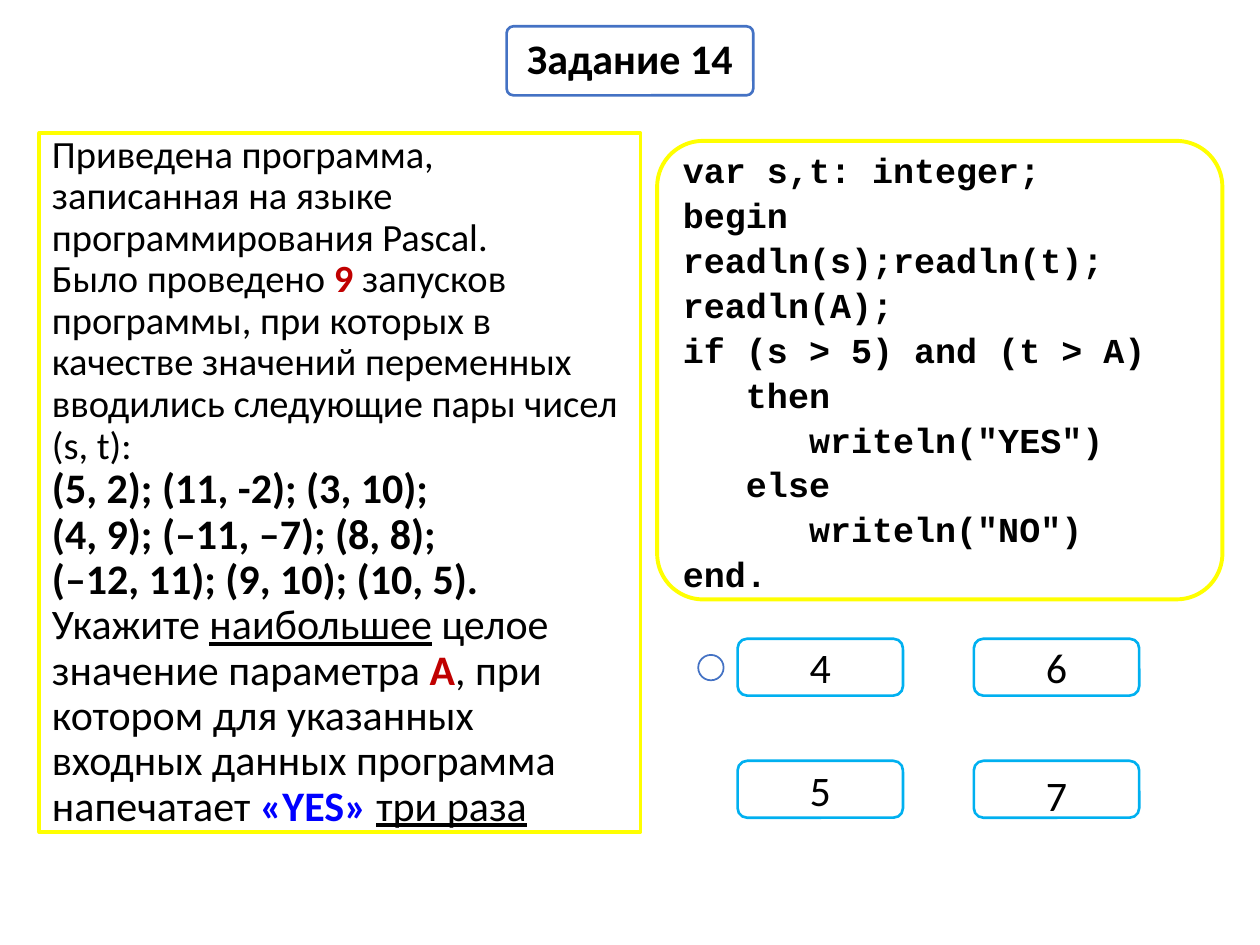
from copy import deepcopy

from pptx import Presentation
from pptx.dml.color import RGBColor
from pptx.enum.shapes import MSO_SHAPE as SHAPE
from pptx.enum.text import MSO_ANCHOR, MSO_AUTO_SIZE, PP_ALIGN
from pptx.util import Pt

BLACK = RGBColor(0, 0, 0)
WHITE = RGBColor(255, 255, 255)
RED = RGBColor(0xC0, 0, 0)
BLUE = RGBColor(0, 0, 255)
YELLOW = RGBColor(255, 255, 0)
CYAN = RGBColor(0, 0xB0, 0xF0)
ACCENT = RGBColor(0x44, 0x72, 0xC4)

# Content
HEADING = "Задание 14"
TASK = [
    ("Приведена программа, записанная на языке программирования Pascal. \n"
     "Было проведено ", dict(size=22)),
    ("9", dict(size=22, color=RED, bold=True)),
    (" запусков программы, при которых в качестве значений переменных "
     "вводились следующие пары чисел (s, t):\n", dict(size=22)),
    ("(5, 2); (11, -2); (3, 10);\n(4, 9); (–11, –7); (8, 8); \n"
     "(–12, 11); (9, 10); (10, 5).\n", dict(bold=True)),
    ("Укажите ", {}),
    ("наибольшее", dict(underline=True)),
    (" целое значение параметра ", {}),
    ("А", dict(color=RED, bold=True)),
    (", при котором для указанных входных данных программа напечатает ", {}),
    ("«YES» ", dict(color=BLUE, bold=True)),
    ("три раза", dict(underline=True)),
]
CODE = """var s,t: integer;
begin
readln(s);readln(t);
readln(A);
if (s > 5) and (t > А)
   then
      writeln("YES")
   else
      writeln("NO")
end.""".split("\n")
ANSWERS = [["4", "6"], ["5", "7"]]


def add_text(p, text, size=24, font="Calibri", color=BLACK, bold=False, underline=False):
    """Add text to a paragraph; each newline becomes a line break of the same format."""
    for i, line in enumerate(text.split("\n")):
        if i:
            p.add_line_break()
            p._p[-1].append(deepcopy(r._r.rPr))
        r = p.add_run()
        r.text = line
        f = r.font
        f.size, f.name, f.bold, f.underline = Pt(size), font, bold, underline
        f.color.rgb = color


def style_box(sp, color, width):
    sp.fill.solid()
    sp.fill.fore_color.rgb = WHITE
    sp.line.color.rgb = color
    sp.line.width = Pt(width)
    tf = sp.text_frame
    tf.word_wrap = True
    tf.auto_size = MSO_AUTO_SIZE.NONE
    tf.vertical_anchor = MSO_ANCHOR.MIDDLE
    return tf


def add_box(kind, x, y, w, h, color, width, corner=None):
    sp = s.shapes.add_shape(kind, Pt(x), Pt(y), Pt(w), Pt(h))
    sp.shadow.inherit = False
    if corner:
        sp.adjustments[0] = corner
    return style_box(sp, color, width)


prs = Presentation()
prs.slide_width, prs.slide_height = Pt(720), Pt(540)
s = prs.slides.add_slide(prs.slide_layouts[5])

# Heading
p = add_box(SHAPE.ROUNDED_RECTANGLE, 289.5, 15, 141, 39.5, ACCENT, 1.5, 0.1).paragraphs[0]
p.alignment, p.line_spacing = PP_ALIGN.CENTER, 0.9
add_text(p, HEADING, bold=True)

# Task statement in the title placeholder
title = s.shapes.title
title.left, title.top, title.width, title.height = Pt(22.5), Pt(76), Pt(343.5), Pt(399.5)
p = style_box(title, YELLOW, 2.25).paragraphs[0]
p.alignment, p.line_spacing = PP_ALIGN.LEFT, 0.9
for text, fmt in TASK:
    add_text(p, text, **fmt)

# Program listing
tf = add_box(SHAPE.ROUNDED_RECTANGLE, 375.5, 80.5, 323, 262, YELLOW, 2.25, 0.1)
for i, line in enumerate(CODE):
    p = tf.add_paragraph() if i else tf.paragraphs[0]
    p.alignment, p.line_spacing = PP_ALIGN.LEFT, 1.07
    add_text(p, line, size=20, font="Courier New", bold=True)

# Answer grid and choice marker
for row, answers in enumerate(ANSWERS):
    for col, answer in enumerate(answers):
        p = add_box(SHAPE.ROUNDED_RECTANGLE, 421.5 + 135 * col, 365 + 69.75 * row,
                    94.5, 32.5, CYAN, 1.5).paragraphs[0]
        p.alignment = PP_ALIGN.CENTER
        if answer == "7":
            p.line_spacing = 1.2
        add_text(p, answer)
add_box(SHAPE.OVAL, 399, 374.25, 14.5, 14.5, ACCENT, 1)

prs.save("out.pptx")
